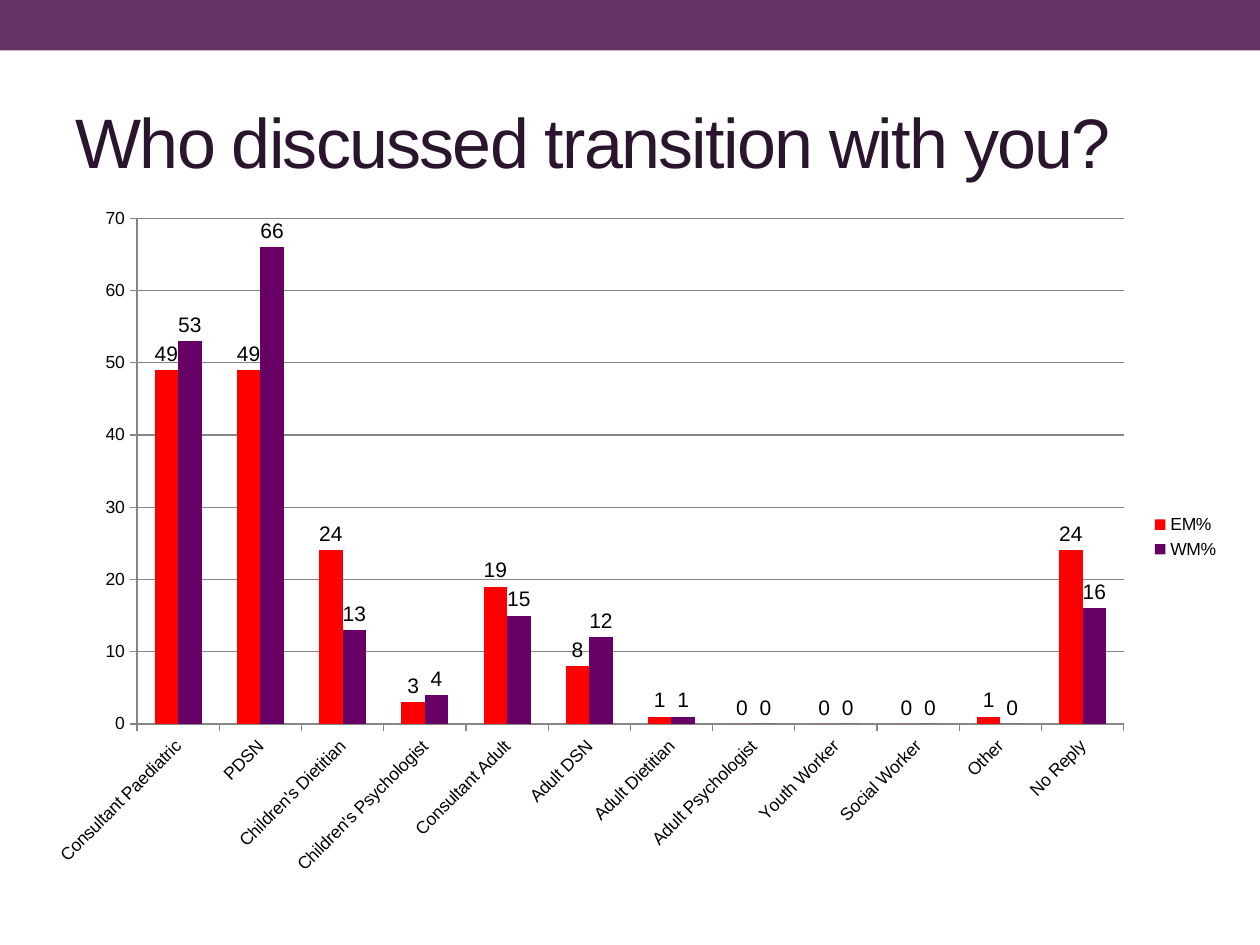
from lxml.etree import SubElement
from pptx import Presentation
from pptx.chart.data import CategoryChartData
from pptx.dml.color import RGBColor
from pptx.enum.chart import XL_CHART_TYPE, XL_LABEL_POSITION, XL_LEGEND_POSITION, XL_TICK_MARK
from pptx.enum.shapes import MSO_SHAPE
from pptx.enum.text import MSO_ANCHOR, PP_ALIGN
from pptx.oxml.ns import qn
from pptx.util import Cm, Pt

BAND_PURPLE = RGBColor(0x66, 0x33, 0x66)
TITLE_PURPLE = RGBColor(0x2B, 0x14, 0x2D)
EAST_RED = RGBColor(0xFF, 0x00, 0x00)
WEST_PURPLE = RGBColor(0x66, 0x00, 0x66)
GRID_GREY = RGBColor(0x86, 0x86, 0x86)
BLACK = RGBColor(0x00, 0x00, 0x00)
FONT = "Arial"

ROLES = {
    "Consultant Paediatric": (49, 53),
    "PDSN": (49, 66),
    "Children's Dietitian": (24, 13),
    "Children's Psychologist": (3, 4),
    "Consultant Adult": (19, 15),
    "Adult DSN": (8, 12),
    "Adult Dietitian": (1, 1),
    "Adult Psychologist": (0, 0),
    "Youth Worker": (0, 0),
    "Social Worker": (0, 0),
    "Other": (1, 0),
    "No Reply": (24, 16),
}
REGIONS = {"EM%": EAST_RED, "WM%": WEST_PURPLE}


def format_font(font, size, color):
    """Apply the slide's typeface with a size and colour."""
    font.name = FONT
    font.size = Pt(size)
    font.bold = False
    font.color.rgb = color


def write_text(frame, text, size, color, align=PP_ALIGN.LEFT, anchor=MSO_ANCHOR.MIDDLE, spacing=0):
    """Write one formatted paragraph, with letter spacing in points."""
    frame.word_wrap = True
    frame.vertical_anchor = anchor
    paragraph = frame.paragraphs[0]
    paragraph.alignment = align
    run = paragraph.add_run()
    run.text = text
    format_font(run.font, size, color)
    run._r.get_or_add_rPr().set("spc", str(spacing * 100))


def add_band(slide, left, top, width, height):
    """Draw the plain band across the top."""
    band = slide.shapes.add_shape(MSO_SHAPE.RECTANGLE, left, top, width, height)
    band.shadow.inherit = False
    band.fill.solid()
    band.fill.fore_color.rgb = BAND_PURPLE
    band.line.fill.background()


def place_title(slide, left, top, width, height):
    """Move and fill the title placeholder."""
    title = slide.shapes.title
    title.left, title.top, title.width, title.height = left, top, width, height
    write_text(title.text_frame, "Who discussed transition with you?", 40, TITLE_PURPLE, spacing=-1)


def set_plot_area(chart, **fractions):
    """Fix the inner plot area as fractions of the chart box."""
    plot_area = chart._chartSpace.chart.plotArea
    for old_layout in plot_area.findall(qn("c:layout")):
        plot_area.remove(old_layout)
    layout = SubElement(plot_area, qn("c:layout"))
    plot_area.insert(0, layout)
    manual = SubElement(layout, qn("c:manualLayout"))
    settings = {"layoutTarget": "inner", "xMode": "edge", "yMode": "edge", **fractions}
    for tag, value in settings.items():
        SubElement(manual, qn(f"c:{tag}")).set("val", str(value))


def format_axes(chart):
    """Style both axes, the gridlines and the slanted role names."""
    roles, percent = chart.category_axis, chart.value_axis
    for axis in (roles, percent):
        axis.major_tick_mark = XL_TICK_MARK.OUTSIDE
        axis.minor_tick_mark = XL_TICK_MARK.NONE
        axis.format.line.color.rgb = GRID_GREY
        format_font(axis.tick_labels.font, 10, BLACK)
    roles._element.txPr.bodyPr.set("rot", str(-45 * 60000))
    percent.minimum_scale, percent.maximum_scale, percent.major_unit = 0, 70, 10
    percent.has_major_gridlines = True
    percent.major_gridlines.format.line.color.rgb = GRID_GREY
    percent.tick_labels.number_format = "0"
    percent.tick_labels.number_format_is_linked = False


def format_series(series, color):
    """Colour one region's columns and label their values."""
    series.format.fill.solid()
    series.format.fill.fore_color.rgb = color
    series.invert_if_negative = False
    labels = series.data_labels
    labels.show_value = True
    labels.number_format = "0"
    labels.number_format_is_linked = False
    labels.position = XL_LABEL_POSITION.OUTSIDE_END
    format_font(labels.font, 12, BLACK)


def add_role_chart(slide, left, top, width, height):
    """Add the clustered columns comparing the two regions by role."""
    data = CategoryChartData(number_format="0")
    data.categories = list(ROLES)
    for region, values in zip(REGIONS, zip(*ROLES.values())):
        data.add_series(region, values)
    chart = slide.shapes.add_chart(
        XL_CHART_TYPE.COLUMN_CLUSTERED, left, top, width, height, data
    ).chart
    chart.has_title = False
    format_font(chart.font, 10, BLACK)
    chart.has_legend = True
    chart.legend.position = XL_LEGEND_POSITION.RIGHT
    chart.legend.include_in_layout = False
    format_font(chart.legend.font, 10, BLACK)
    plot = chart.plots[0]
    plot.gap_width = 150
    plot.overlap = 0
    plot.vary_by_categories = False
    for series, color in zip(plot.series, REGIONS.values()):
        format_series(series, color)
    format_axes(chart)
    set_plot_area(chart, x=0.09, y=0.04, w=0.82, h=0.73)


def main():
    """Build and save the slide."""
    presentation = Presentation()
    presentation.slide_width, presentation.slide_height = Cm(25.4), Cm(19.05)
    slide = presentation.slides.add_slide(presentation.slide_layouts[5])
    add_band(slide, 0, 0, presentation.slide_width, Cm(1.02))
    place_title(slide, Cm(1.27), Cm(1.47), Cm(22.86), Cm(2.74))
    add_role_chart(slide, Cm(0.58), Cm(3.84), Cm(24.26), Cm(13.97))
    presentation.save("out.pptx")


if __name__ == "__main__":
    main()
